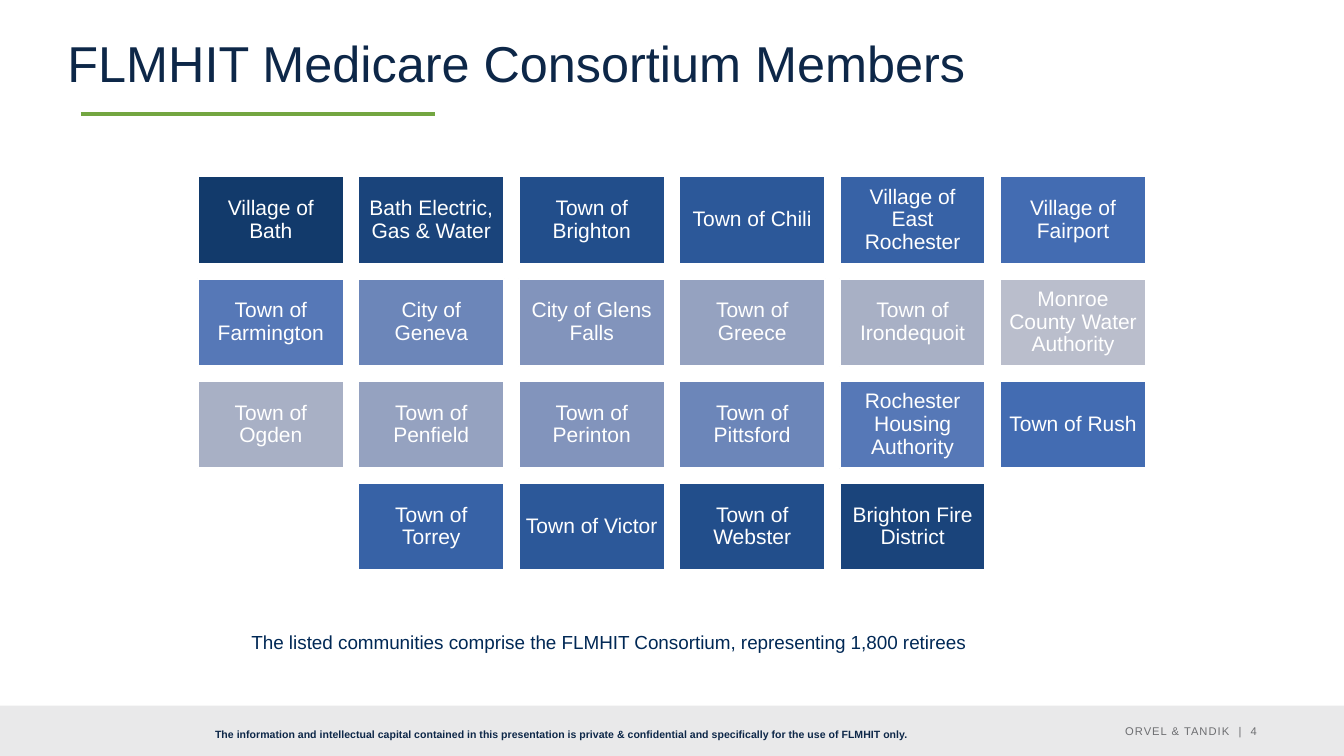
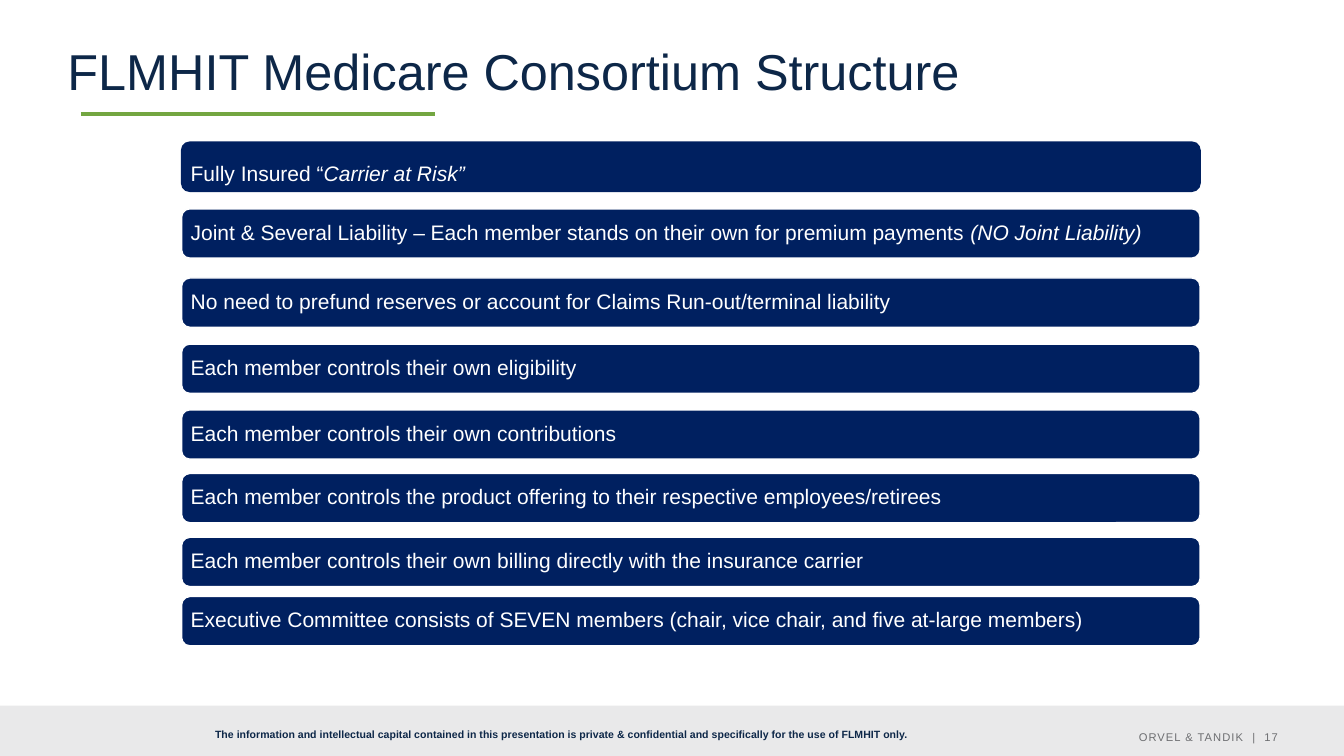
from pptx import Presentation
from pptx.dml.color import RGBColor
from pptx.enum import shapes, text
from pptx.util import Pt
from lxml import etree

THEME = {
    "font": "Arial",
    "white": "FFFFFF", "band": "E9E9EA", "rule": "73A641",
    "title": "0D2748", "bar": "002060", "note": "002855", "footer": "6D6E71",
    "ramp": ["123A6B", "1A447B", "224E8B", "2C5899", "3762A6", "436CB2",
             "5678B7", "6C86B9", "8294BC", "95A2C0", "A8B0C5", "BABECC"],
    "title_size": 36, "body_size": 15, "note_size": 13.5,
    "legal_size": 7.5, "footer_size": 8,
}
LEFT, CENTER, RIGHT = text.PP_ALIGN.LEFT, text.PP_ALIGN.CENTER, text.PP_ALIGN.RIGHT
TOP, MIDDLE = text.MSO_ANCHOR.TOP, text.MSO_ANCHOR.MIDDLE
SLIDE_WIDTH = 960


def write(box, spans, size, color, align=LEFT, anchor=TOP, spacing=1.0,
          inset=(7.2, 3.6), bold=False, tracking=0):
    """Fill a box with one paragraph of (words, italic) spans."""
    frame_format = {
        "word_wrap": True, "auto_size": text.MSO_AUTO_SIZE.NONE,
        "vertical_anchor": anchor,
        "margin_left": Pt(inset[0]), "margin_right": Pt(inset[0]),
        "margin_top": Pt(inset[1]), "margin_bottom": Pt(inset[1]),
    }
    for name, value in frame_format.items():
        setattr(box.text_frame, name, value)
    para = box.text_frame.paragraphs[0]
    para.alignment, para.line_spacing = align, spacing
    for words, italic in spans:
        span = para.add_run()
        span.text = words
        font_format = {"name": THEME["font"], "size": Pt(size),
                       "bold": bold, "italic": italic}
        for name, value in font_format.items():
            setattr(span.font, name, value)
        span.font.color.rgb = RGBColor.from_string(color)
        if tracking:
            span._r.get_or_add_rPr().set("spc", str(tracking))


def add_block(page, kind, place, fill, line=None, line_width=1):
    """Add a flat filled shape at (left, top, width, height)."""
    block = page.shapes.add_shape(kind, *map(Pt, place))
    block.shadow.inherit = False
    block.fill.solid()
    block.fill.fore_color.rgb = RGBColor.from_string(fill)
    if line:
        block.line.color.rgb = RGBColor.from_string(line)
        block.line.width = Pt(line_width)
    else:
        block.line.fill.background()
    return block


deck = Presentation()
deck.slide_width, deck.slide_height = Pt(SLIDE_WIDTH), Pt(540)

# Shared parts: title, green rule, footer band and footer texts
LEGAL = ("The information and intellectual capital contained in this presentation "
         "is private & confidential and specifically for the use of FLMHIT only.")
page_settings = [
    ("FLMHIT Medicare Consortium Members", (41, 24.5, 826, 47), TOP,
     "4", (741, 510.5, 162, 23)),
    ("FLMHIT Medicare Consortium Structure", (41, 26.6, 715, 52.6), MIDDLE,
     "17", (756, 514.8, 162, 23)),
]
pages = []
for heading, title_place, title_anchor, number, number_place in page_settings:
    page = deck.slides.add_slide(deck.slide_layouts[5])
    pages.append(page)
    add_block(page, shapes.MSO_SHAPE.RECTANGLE, (0, 504, SLIDE_WIDTH, 36), THEME["band"])

    rule = page.shapes.add_connector(shapes.MSO_CONNECTOR.STRAIGHT,
                                     Pt(57.8), Pt(81.4), Pt(310.5), Pt(81.4))
    rule.line.color.rgb = RGBColor.from_string(THEME["rule"])
    rule.line.width = Pt(3)
    etree.SubElement(
        rule._element.spPr,
        "{http://schemas.openxmlformats.org/drawingml/2006/main}effectLst")

    title = page.shapes.title
    for name, value in zip(("left", "top", "width", "height"), title_place):
        setattr(title, name, Pt(value))
    write(title, [(heading, False)], THEME["title_size"], THEME["title"],
          anchor=title_anchor, spacing=0.9)

    legal = page.shapes.add_textbox(Pt(41), Pt(516.2), Pt(720), Pt(16.6))
    write(legal, [(LEGAL, False)], THEME["legal_size"], THEME["title"],
          align=CENTER, bold=True)
    footer = page.shapes.add_textbox(*map(Pt, number_place))
    write(footer, [(f"ORVEL & TANDIK  |  {number}", False)], THEME["footer_size"],
          THEME["footer"], align=RIGHT, anchor=MIDDLE, inset=(5, 2.2), tracking=70)

members_page, structure_page = pages

# Member tiles: centred rows, colours run light and back to dark
member_rows = [
    ["Village of Bath", "Bath Electric, Gas & Water", "Town of Brighton",
     "Town of Chili", "Village of East Rochester", "Village of Fairport"],
    ["Town of Farmington", "City of Geneva", "City of Glens Falls",
     "Town of Greece", "Town of Irondequoit", "Monroe County Water Authority"],
    ["Town of Ogden", "Town of Penfield", "Town of Perinton",
     "Town of Pittsford", "Rochester Housing Authority", "Town of Rush"],
    ["Town of Torrey", "Town of Victor", "Town of Webster", "Brighton Fire District"],
]
TILE_WIDTH, TILE_HEIGHT, COLUMN_STEP, ROW_STEP = 104.2, 62.5, 114.6, 73
tile_colors = iter(THEME["ramp"] + THEME["ramp"][-2:0:-1])
for row, members in enumerate(member_rows):
    row_width = (len(members) - 1) * COLUMN_STEP + TILE_WIDTH
    row_left = (SLIDE_WIDTH - row_width) / 2
    for column, member in enumerate(members):
        place = (row_left + column * COLUMN_STEP, 126 + row * ROW_STEP,
                 TILE_WIDTH, TILE_HEIGHT)
        tile = add_block(members_page, shapes.MSO_SHAPE.RECTANGLE, place,
                         next(tile_colors), THEME["white"], 1.5)
        write(tile, [(member, False)], THEME["body_size"], THEME["white"],
              align=CENTER, anchor=MIDDLE, spacing=0.9, inset=(4.5, 4.5))

# Note under the tiles
note = members_page.shapes.add_textbox(Pt(172.5), Pt(447), Pt(577.5), Pt(24))
write(note, [("The listed communities comprise the FLMHIT Consortium, "
              "representing 1,800 retirees", False)],
      THEME["note_size"], THEME["note"])

# Structure bars: top, line spacing, outline, spans
bars = [
    (101.5, 1.5, "bar", [("Fully Insured “", False), ("Carrier at Risk”", True)]),
    (149.2, 0.9, "white",
     [("Joint & Several Liability – Each member stands on their own for premium payments ",
       False), ("(NO Joint Liability)", True)]),
    (198.6, 0.9, "white",
     [("No need to prefund reserves or account for Claims Run-out/terminal liability", False)]),
    (245.8, 0.9, "white", [("Each member controls their own eligibility", False)]),
    (292.8, 0.9, "white", [("Each member controls their own contributions", False)]),
    (338.2, 0.9, "white",
     [("Each member controls the product offering to their respective employees/retirees",
       False)]),
    (383.8, 0.9, "white",
     [("Each member controls their own billing directly with the insurance carrier", False)]),
    (426.1, 0.9, "white",
     [("Executive Committee consists of SEVEN members "
       "(chair, vice chair, and five at-large members)", False)]),
]
for top, spacing, outline, spans in bars:
    bar = add_block(structure_page, shapes.MSO_SHAPE.ROUNDED_RECTANGLE,
                    (129.7, top, 727.5, 35.2), THEME["bar"], THEME[outline])
    write(bar, spans, THEME["body_size"], THEME["white"], anchor=MIDDLE,
          spacing=spacing, inset=(4.8, 4.5))

deck.save("out.pptx")
